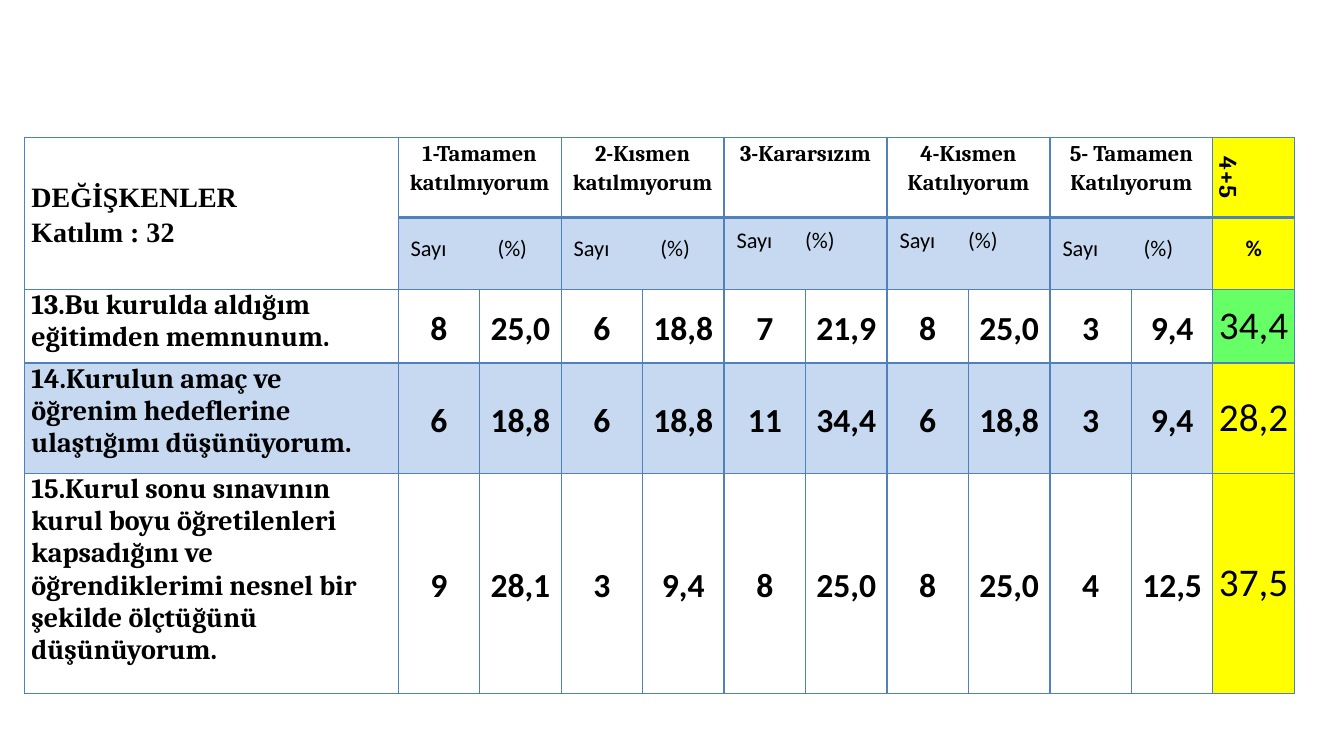
import pptx
import pptx.util
import pptx.dml.color
import pptx.enum.text
import pptx.oxml
import pptx.oxml.ns

Pt = pptx.util.Pt
RGBColor = pptx.dml.color.RGBColor
CENTER = pptx.enum.text.PP_ALIGN.CENTER
LEFT = pptx.enum.text.PP_ALIGN.LEFT
MIDDLE = pptx.enum.text.MSO_ANCHOR.MIDDLE
TOP = pptx.enum.text.MSO_ANCHOR.TOP

BLACK = RGBColor(0x00, 0x00, 0x00)
BORDER = RGBColor(0x4F, 0x81, 0xBD)
BAND = RGBColor(0xC6, 0xD9, 0xF1)
YELLOW = RGBColor(0xFF, 0xFF, 0x00)
GREEN = RGBColor(0x66, 0xFF, 0x66)

VARIABLES = "DEĞİŞKENLER\nKatılım : 32"
ANSWERS = [
    ("1-Tamamen katılmıyorum", 62, 0),
    ("2-Kısmen katılmıyorum", 62, 0),
    ("3-Kararsızım", 49, 11.5),
    ("4-Kısmen Katılıyorum", 49, 11.5),
    ("5- Tamamen Katılıyorum", 58, 0),
]
COUNT_AND_SHARE = "Sayı\t(%)"
QUESTIONS = [
    ("13.Bu kurulda aldığım eğitimden memnunum.",
     ["8", "25,0", "6", "18,8", "7", "21,9", "8", "25,0", "3", "9,4"],
     "34,4", None, GREEN),
    ("14.Kurulun amaç ve öğrenim hedeflerine ulaştığımı düşünüyorum.",
     ["6", "18,8", "6", "18,8", "11", "34,4", "6", "18,8", "3", "9,4"],
     "28,2", BAND, YELLOW),
    ("15.Kurul sonu sınavının kurul boyu öğretilenleri kapsadığını ve "
     "öğrendiklerimi nesnel bir şekilde ölçtüğünü düşünüyorum.",
     ["9", "28,1", "3", "9,4", "8", "25,0", "8", "25,0", "4", "12,5"],
     "37,5", None, YELLOW),
]
ROW_HEIGHTS = [57.6, 51, 52.6, 78.8, 157.5]
QUESTION_WIDTH, VALUE_WIDTH = 267, 58.2
SCORE_COLUMN = 11


def set_borders(cell, top_width, bottom_width):
    properties = cell._tc.get_or_add_tcPr()
    widths = {"lnL": 1, "lnR": 1, "lnT": top_width, "lnB": bottom_width}
    for side, width in widths.items():
        properties.append(pptx.oxml.parse_xml(
            f'<a:{side} {pptx.oxml.ns.nsdecls("a")} w="{Pt(width)}">'
            f'<a:solidFill><a:srgbClr val="{BORDER}"/></a:solidFill></a:{side}>'))


def fill_cell(cell, text, size, font="Calibri", bold=True, align=CENTER,
              spacing=1.15, anchor=MIDDLE, fill=None, side=5, left=None,
              bottom=0, tab=None):
    cell.margin_left = Pt(side if left is None else left)
    cell.margin_right = Pt(side)
    cell.margin_top = 0
    cell.margin_bottom = Pt(bottom)
    cell.vertical_anchor = anchor
    if fill is not None:
        cell.fill.solid()
        cell.fill.fore_color.rgb = fill
    cell.text_frame.text = text
    for paragraph in cell.text_frame.paragraphs:
        paragraph.alignment = align
        paragraph.line_spacing = spacing
        if tab:
            paragraph._p.get_or_add_pPr().append(pptx.oxml.parse_xml(
                f'<a:tabLst {pptx.oxml.ns.nsdecls("a")}>'
                f'<a:tab pos="{Pt(tab)}" algn="l"/></a:tabLst>'))
        paragraph.font.name = font
        paragraph.font.size = Pt(size)
        paragraph.font.bold = bold
        paragraph.font.color.rgb = BLACK


def main():
    deck = pptx.Presentation()
    deck.slide_width, deck.slide_height = Pt(960), Pt(540)
    slide = deck.slides.add_slide(deck.slide_layouts[6])
    survey = slide.shapes.add_table(
        len(ROW_HEIGHTS), SCORE_COLUMN + 1, Pt(17.4), Pt(98),
        Pt(QUESTION_WIDTH + SCORE_COLUMN * VALUE_WIDTH), Pt(sum(ROW_HEIGHTS))).table
    survey.first_row = False
    survey.horz_banding = False
    for column_index, column in enumerate(survey.columns):
        column.width = Pt(VALUE_WIDTH if column_index else QUESTION_WIDTH)
    for row_index, height in enumerate(ROW_HEIGHTS):
        survey.rows[row_index].height = Pt(height)
        for column_index in range(SCORE_COLUMN + 1):
            cell = survey.cell(row_index, column_index)
            set_borders(cell,
                        2.25 if row_index == 1 and column_index else 1,
                        2.25 if row_index == 0 and column_index else 1)
            cell.fill.background()

    survey.cell(0, 0).merge(survey.cell(1, 0))
    fill_cell(survey.cell(0, 0), VARIABLES, 20, "Times New Roman", align=LEFT)
    for index, (answer, tab, bottom) in enumerate(ANSWERS):
        column = 1 + 2 * index
        for row in (0, 1):
            survey.cell(row, column).merge(survey.cell(row, column + 1))
        fill_cell(survey.cell(0, column), answer, 16, "Cambria", anchor=TOP)
        fill_cell(survey.cell(1, column), COUNT_AND_SHARE, 16, bold=False,
                  align=LEFT, spacing=Pt(13), fill=BAND, left=9,
                  bottom=bottom, tab=tab)

    score_heading = survey.cell(0, SCORE_COLUMN)
    fill_cell(score_heading, "4+5", 18, "Cambria", anchor=TOP, fill=YELLOW)
    score_heading._tc.get_or_add_tcPr().set("vert", "vert")
    fill_cell(survey.cell(1, SCORE_COLUMN), "%", 16, spacing=Pt(13), fill=YELLOW)

    for row, (question, values, score, band, score_fill) in enumerate(QUESTIONS, 2):
        fill_cell(survey.cell(row, 0), question, 20, "Cambria", align=LEFT,
                  spacing=1.0, anchor=TOP, fill=band)
        for column, value in enumerate(values, 1):
            fill_cell(survey.cell(row, column), value, 24, fill=band)
        fill_cell(survey.cell(row, SCORE_COLUMN), score, 28, bold=False,
                  spacing=1.0, fill=score_fill, side=0.7)

    deck.save("out.pptx")


if __name__ == "__main__":
    main()
